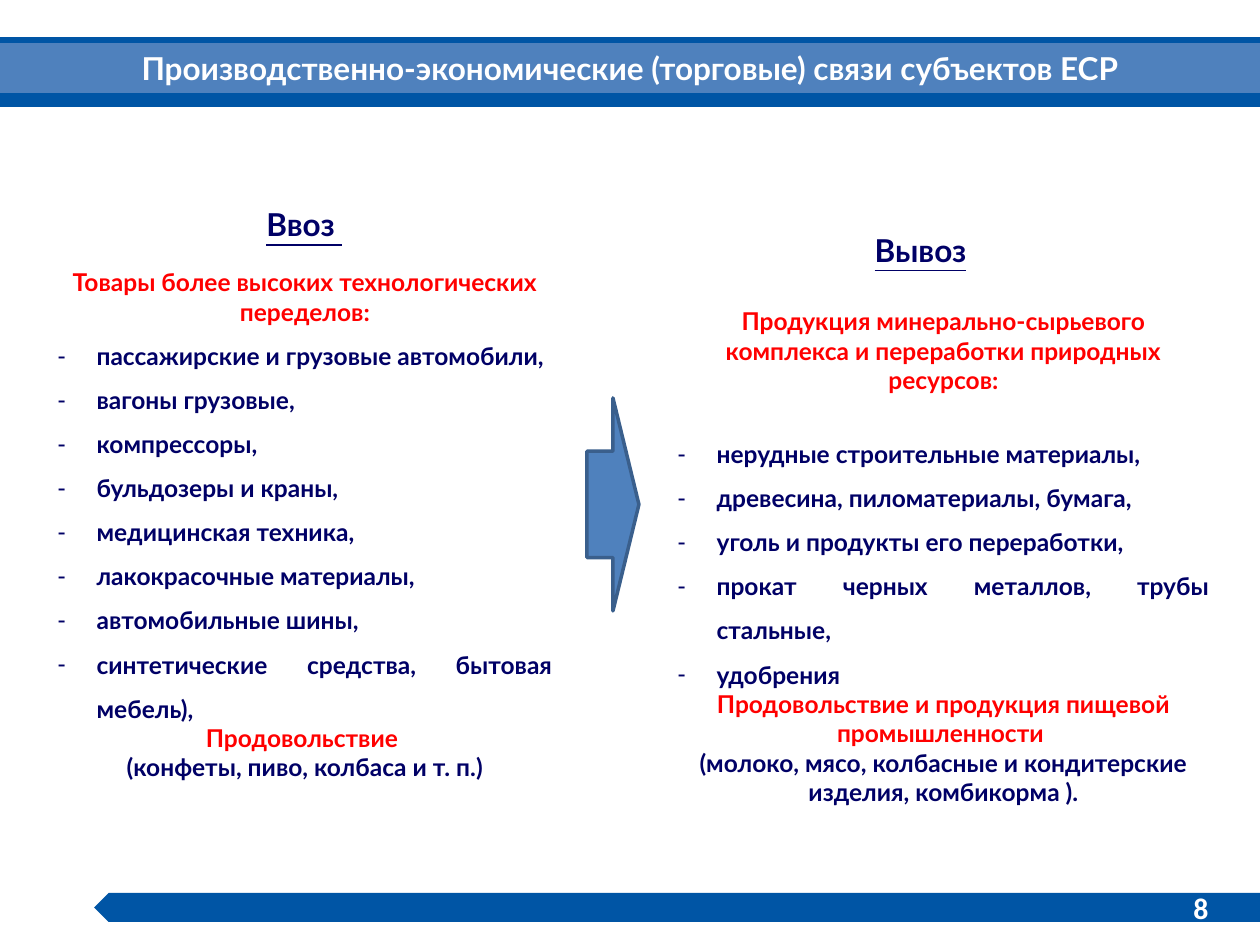
"""Builds the slide on goods brought into and out of the region."""
from lxml.etree import SubElement
from pptx import Presentation
from pptx.dml.color import RGBColor as RGB
from pptx.enum.shapes import MSO_SHAPE as Kind
from pptx.enum.text import MSO_ANCHOR as Anchor, MSO_AUTO_SIZE as Fit, PP_ALIGN as Align
from pptx.oxml.ns import qn
from pptx.util import Emu, Pt

NAVY, RED, WHITE = RGB(0, 0, 0x66), RGB(0xFF, 0, 0), RGB(0xFF, 0xFF, 0xFF)
DEEP, BLUE, EDGE = RGB(0, 0x55, 0xA5), RGB(0x4F, 0x81, 0xBD), RGB(0x3A, 0x5F, 0x8C)
PX = 914400 / 126
INDENT = 39

TITLE = "Производственно-экономические (торговые) связи субъектов ЕСР"
SIDES = [
    {
        "name": "Ввоз ", "label": (203, 199, 203, 50), "box": (45, 261, 520, 488), "gap": 0,
        "head": "Товары более высоких технологических переделов:",
        "goods": [
            "пассажирские и грузовые автомобили, ", "вагоны грузовые, ",
            "компрессоры, ", "бульдозеры и краны, ", "медицинская техника, ",
            "лакокрасочные материалы, ", "автомобильные шины, ",
            "синтетические средства, бытовая мебель), ",
        ],
        "food": "Продовольствие ",
        "note": "(конфеты, пиво, колбаса и т. п.)",
    },
    {
        "name": "Вывоз", "label": (819, 225, 203, 50), "box": (665, 300, 557, 444), "gap": 17,
        "head": "Продукция минерально-сырьевого комплекса и переработки природных ресурсов:",
        "goods": [
            "нерудные строительные материалы, ", "древесина, пиломатериалы, бумага, ",
            "уголь и продукты его переработки, ",
            "прокат черных металлов, трубы стальные,", "удобрения",
        ],
        "food": "Продовольствие и продукция пищевой промышленности ",
        "note": "(молоко, мясо, колбасные и кондитерские изделия, комбикорма ).",
    },
]


def px(n):
    return Emu(round(n * PX))


def place(shape, box):
    shape.left, shape.top, shape.width, shape.height = map(px, box)


def form(slide, kind, box, color):
    shape = slide.shapes.add_shape(kind, *map(px, box))
    shape.shadow.inherit = False
    shape.fill.solid()
    shape.fill.fore_color.rgb = color
    shape.line.fill.background()
    return shape


def setup(shape, anchor=Anchor.TOP):
    frame = shape.text_frame
    frame.word_wrap = True
    frame.auto_size = Fit.NONE
    frame.vertical_anchor = anchor
    return frame


def write(para, text, size, color, align=Align.CENTER, face="Lato", under=False):
    para.alignment = align
    para.space_before = Pt(0)
    run = para.add_run()
    run.text = text
    font = run.font
    font.name, font.size, font.bold = face, Pt(size), True
    font.color.rgb = color
    if under:
        font.underline = True


def mark(para, dash):
    props = para._p.get_or_add_pPr()
    props.set("marL", str(px(INDENT if dash else 0)))
    props.set("indent", str(px(-INDENT if dash else 0)))
    if dash:
        SubElement(props, qn("a:buChar")).set("char", "-")
    else:
        SubElement(props, qn("a:buNone"))


def fill_list(body, side):
    place(body, side["box"])
    frame = setup(body)
    rows = [(side["head"], RED, False)]
    rows += [(item, NAVY, True) for item in side["goods"]]
    rows += [(side["food"], RED, False), (side["note"], NAVY, False)]
    for i, (text, color, dash) in enumerate(rows):
        para = frame.add_paragraph() if i else frame.paragraphs[0]
        mark(para, dash)
        write(para, text, 14, color, Align.JUSTIFY if dash else Align.CENTER)
        para.line_spacing = 1.5 if dash else 1.0
        para.space_after = Pt(0 if i else side["gap"])


def label(slide, box, text, size, color, anchor=Anchor.TOP, **style):
    frame = setup(slide.shapes.add_textbox(*map(px, box)), anchor)
    write(frame.paragraphs[0], text, size, color, **style)


def main():
    deck = Presentation()
    deck.slide_width, deck.slide_height = px(1260), px(945)
    slide = deck.slides.add_slide(deck.slide_layouts[3])
    title, *bodies = slide.placeholders

    band = form(slide, Kind.RECTANGLE, (0, 37, 1260, 70), DEEP)
    foot = form(slide, Kind.PENTAGON, (94, 893, 1166, 29), DEEP)
    foot.rotation = 180
    for shape in (foot, band):
        slide.shapes._spTree.insert(2, shape._element)

    place(title, (0, 43, 1260, 50))
    title.fill.solid()
    title.fill.fore_color.rgb = BLUE
    write(setup(title, Anchor.MIDDLE).paragraphs[0], TITLE, 18, WHITE)

    for body, side in zip(bodies, SIDES):
        fill_list(body, side)
        label(slide, side["label"], side["name"], 18, NAVY, under=True)

    arrow = form(slide, Kind.RIGHT_ARROW, (587, 398, 52, 213), BLUE)
    arrow.line.color.rgb = EDGE
    arrow.line.width = Pt(2)
    label(slide, (927, 883, 294, 50), "8", 17, WHITE, Anchor.MIDDLE,
          align=Align.RIGHT, face="Calibri")
    deck.save("out.pptx")


if __name__ == "__main__":
    main()
